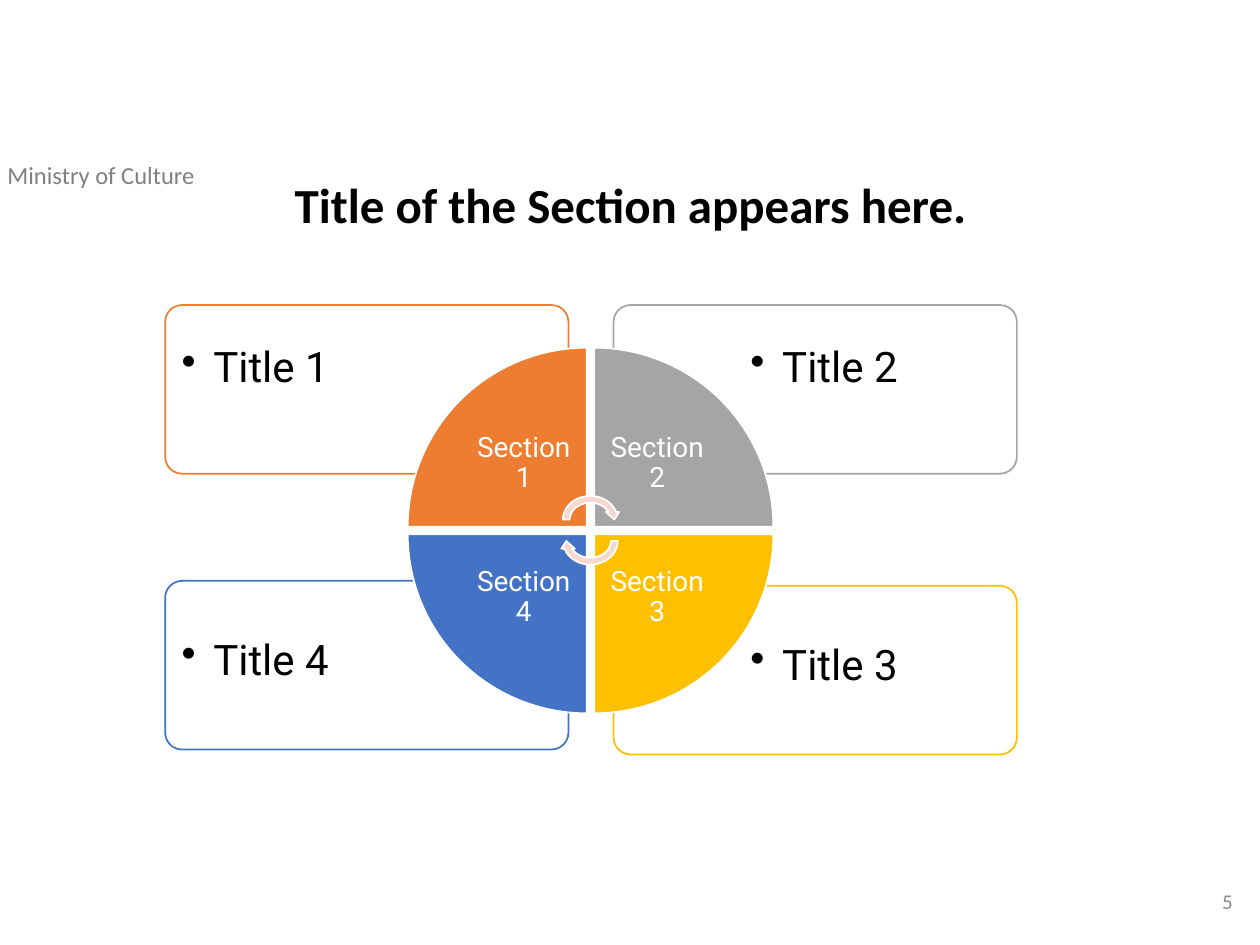
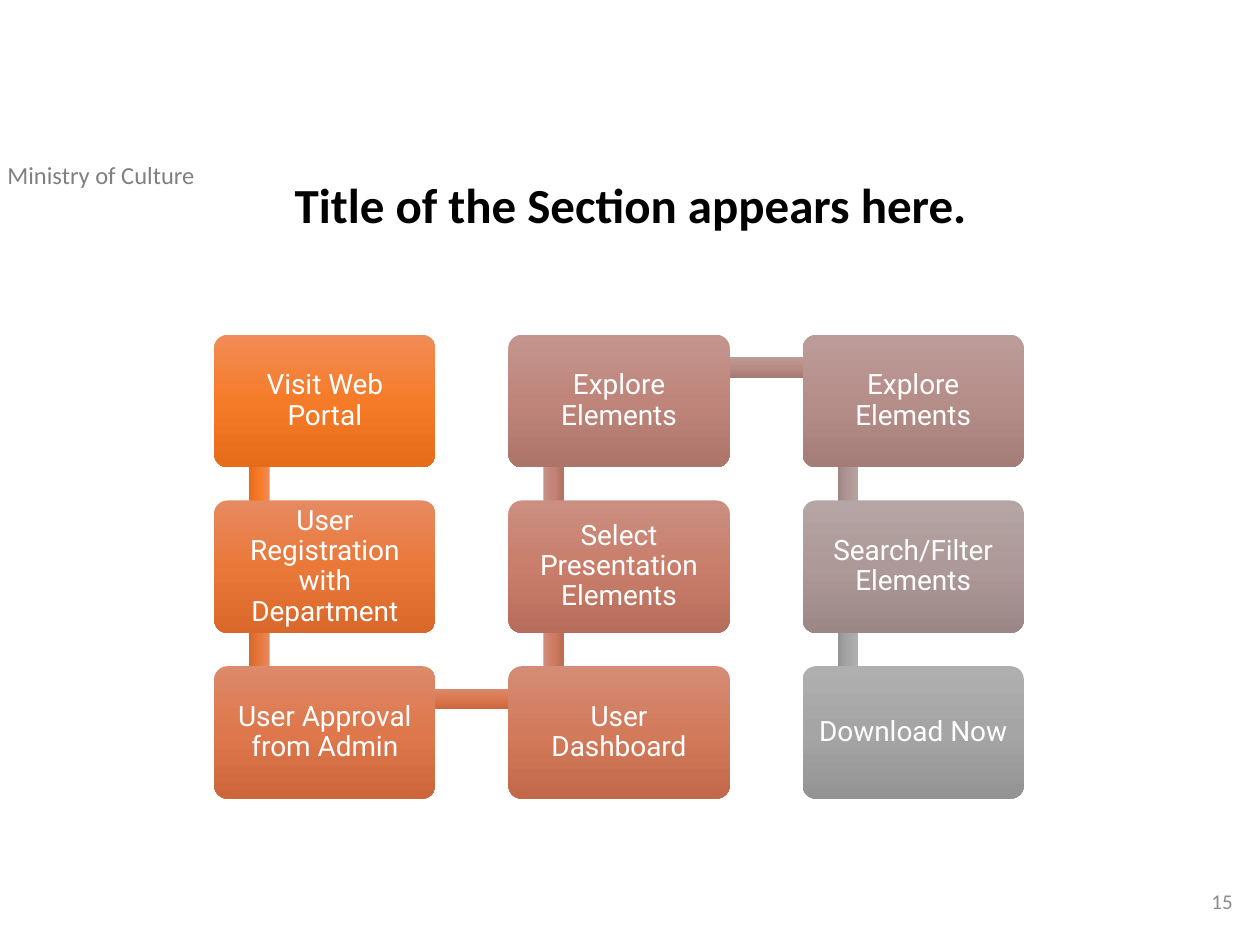
from copy import deepcopy
from dataclasses import dataclass

from lxml import etree
from pptx import Presentation
from pptx.dml.color import RGBColor
from pptx.enum.shapes import MSO_SHAPE
from pptx.enum.text import MSO_ANCHOR, PP_ALIGN
from pptx.oxml.ns import qn
from pptx.util import Cm, Pt

ROUNDED = MSO_SHAPE.ROUNDED_RECTANGLE
BAR = MSO_SHAPE.RECTANGLE
WEDGE = MSO_SHAPE.PIE_WEDGE
CYCLE_ARROW = MSO_SHAPE.CIRCULAR_ARROW
LEFT, CENTER, RIGHT = PP_ALIGN.LEFT, PP_ALIGN.CENTER, PP_ALIGN.RIGHT
TOP, MIDDLE = MSO_ANCHOR.TOP, MSO_ANCHOR.MIDDLE


@dataclass(frozen=True)
class Theme:
    heading_font: str = "Calibri"
    body_font: str = "Roboto"
    black: str = "000000"
    white: str = "FFFFFF"
    header_gray: str = "808080"
    number_gray: str = "8C8C8C"
    orange: str = "ED7D31"
    gray: str = "A5A5A5"
    gold: str = "FFC000"
    blue: str = "4472C4"
    arrow_pink: str = "F8D7CE"
    title_size: int = 28
    card_size: int = 24
    label_size: int = 16
    header_size: int = 14
    number_size: int = 12
    line_width: float = 1
    tight: float = 0.9


class SlideBuilder:
    def __init__(self, presentation, theme):
        self.presentation = presentation
        self.theme = theme
        self.slide = None

    def new_slide(self, title, number):
        theme = self.theme
        self.slide = self.presentation.slides.add_slide(self.presentation.slide_layouts[6])
        self.text(-0.1, 3.1, 7.37, 0.86, "Ministry of Culture", theme.header_size,
                  theme.header_gray, theme.heading_font)
        self.text(5.69, 3.53, 16.41, 2, title, theme.title_size, theme.black,
                  theme.heading_font, bold=True, spacing=theme.tight)
        self.text(19.38, 17.65, 5.72, 1.02, str(number), theme.number_size,
                  theme.number_gray, theme.heading_font, align=RIGHT, anchor=MIDDLE)

    def text(self, left, top, width, height, words, size, color, font, **style):
        box = self.slide.shapes.add_textbox(Cm(left), Cm(top), Cm(width), Cm(height))
        self.fill_text(box, words, size, color, font, **style)

    def fill_text(self, shape, words, size, color, font, bold=False, align=LEFT,
                  anchor=TOP, spacing=1.0, insets=(0.25, 0.13), bullet=False):
        frame = shape.text_frame
        frame.word_wrap = True
        frame.vertical_anchor = anchor
        frame.margin_left = frame.margin_right = Cm(insets[0])
        frame.margin_top = frame.margin_bottom = Cm(insets[1])
        paragraph = frame.paragraphs[0]
        if bullet:
            properties = paragraph._p.get_or_add_pPr()
            properties.set("marL", str(Cm(0.64)))
            properties.set("indent", str(-Cm(0.64)))
            etree.SubElement(properties, qn("a:buChar"), char="•")
        paragraph.alignment = align
        paragraph.line_spacing = spacing
        run = paragraph.add_run()
        run.text = words
        run.font.name = font
        run.font.size = Pt(size)
        run.font.bold = bold
        run.font.color.rgb = RGBColor.from_string(color)

    def shape(self, kind, left, top, width, height, fill, line=None, rotation=0):
        shape = self.slide.shapes.add_shape(kind, Cm(left), Cm(top), Cm(width), Cm(height))
        shape.shadow.inherit = False
        shape.rotation = rotation
        if kind == ROUNDED:
            shape.adjustments[0] = 0.1
        if isinstance(fill, str):
            shape.fill.solid()
            shape.fill.fore_color.rgb = RGBColor.from_string(fill)
        else:
            self.shade(shape, fill)
        if line:
            shape.line.color.rgb = RGBColor.from_string(line)
            shape.line.width = Pt(self.theme.line_width)
        else:
            shape.line.fill.background()
        return shape

    def shade(self, shape, colors):
        shape.fill.gradient()
        shape.fill.gradient_angle = 270
        stop_list = shape._element.spPr.find(".//" + qn("a:gsLst"))
        stop_list.append(deepcopy(stop_list[0]))
        for index, (stop, color) in enumerate(zip(shape.fill.gradient_stops, colors)):
            stop.position = index / 2
            stop.color.rgb = RGBColor.from_string(color)

    def card(self, left, top, color, words, text_dx, text_dy, anchor):
        theme = self.theme
        self.shape(ROUNDED, left, top, 8.13, 3.4, theme.white, color)
        self.text(left + text_dx, top + text_dy, 5.54, 2.41, words, theme.card_size,
                  theme.black, theme.body_font, anchor=anchor, spacing=theme.tight,
                  insets=(0.25, 0.25), bullet=True)

    def wedge(self, column, row, color, words, rotation):
        theme = self.theme
        size, label_size, pitch = 3.61, 2.54, 3.76
        left, top = 8.22 + column * pitch, 7.01 + row * pitch
        inner = size - label_size
        self.shape(WEDGE, left, top, size, size, color, theme.white, rotation)
        self.text(left + inner * (1 - column), top + inner * (1 - row), label_size,
                  label_size, words, theme.label_size, theme.white, theme.body_font,
                  align=CENTER, anchor=MIDDLE, spacing=theme.tight, insets=(0.3, 0.3))

    def step(self, left, top, words, colors):
        theme = self.theme
        box = self.shape(ROUNDED, left, top, 4.46, 2.67, colors)
        self.fill_text(box, words, theme.label_size, theme.white, theme.body_font,
                       align=CENTER, anchor=MIDDLE, spacing=theme.tight,
                       insets=(0.18, 0.18))

    def link(self, start, end, colors):
        thickness = 0.41
        dx, dy = end[0] - start[0], end[1] - start[1]
        length = abs(dx) + abs(dy)
        rotation = 0 if abs(dx) > abs(dy) else 90 if dy > 0 else 270
        center_x, center_y = (start[0] + end[0]) / 2, (start[1] + end[1]) / 2
        self.shape(BAR, center_x - length / 2, center_y - thickness / 2, length,
                   thickness, colors, rotation=rotation)


def build_cycle(builder):
    theme = builder.theme
    builder.new_slide("Title of the Section appears here.", 5)
    left, right = 3.33, 12.37
    builder.card(right, 11.81, theme.gold, "Title 3", 2.51, 0.92, TOP)
    builder.card(left, 11.71, theme.blue, "Title 4", 0.08, 0.92, TOP)
    builder.card(right, 6.15, theme.gray, "Title 2", 2.51, 0.08, MIDDLE)
    builder.card(left, 6.15, theme.orange, "Title 1", 0.08, 0.08, MIDDLE)
    quadrants = [(0, 0, theme.orange), (1, 0, theme.gray),
                 (1, 1, theme.gold), (0, 1, theme.blue)]
    for index, (column, row, color) in enumerate(quadrants):
        builder.wedge(column, row, color, f"Section {index + 1}", index * 90)
    for top, rotation in ((9.93, 0), (10.36, 180)):
        builder.shape(CYCLE_ARROW, 11.28, top, 1.24, 1.09, theme.arrow_pink,
                      theme.white, rotation)


STEPS = [
    ("Visit Web Portal", ("F18C57", "F67B28", "E56C19")),
    ("User Registration with Department", ("E78A60", "EA7839", "D9682A")),
    ("User Approval from Admin", ("DD8A6A", "DE774B", "CD673B")),
    ("User Dashboard", ("D48C76", "D37A5B", "C2694B")),
    ("Select Presentation Elements", ("CB8F81", "C97E6B", "B76D5B")),
    ("Explore Elements", ("C3958D", "BF857B", "AD7469")),
    ("Explore Elements", ("BC9C99", "B68E89", "A47C78")),
    ("Search/Filter Elements", ("B5A5A4", "AD9998", "9B8786")),
    ("Download Now", ("AFAFAF", "A5A5A5", "939393")),
]
LINKS = [
    ("F18C57", "F67B28", "E56C19"),
    ("E58A61", "E8783C", "D7682C"),
    ("DA8A6E", "DB7850", "CA673F"),
    ("D08D7B", "CF7B62", "BD6B52"),
    ("C79288", "C38274", "B17163"),
    ("BE9A95", "B88B85", "A67A74"),
    ("B6A4A2", "AE9796", "9C8584"),
    ("AFAFAF", "A5A5A5", "939393"),
]


def step_corner(index):
    column, row = divmod(index, 3)
    if column % 2:
        row = 2 - row
    return 4.32 + column * 5.93, 6.75 + row * 3.34


def link_point(index):
    left, top = step_corner(index)
    return left + 0.91, top + 0.66


def build_process(builder):
    builder.new_slide("Title of the Section appears here.", 15)
    for index, (words, colors) in enumerate(STEPS):
        if index < len(LINKS):
            builder.link(link_point(index), link_point(index + 1), LINKS[index])
        builder.step(*step_corner(index), words, colors)


def main():
    presentation = Presentation()
    presentation.slide_width = Cm(25.4)
    presentation.slide_height = Cm(19.05)
    builder = SlideBuilder(presentation, Theme())
    build_cycle(builder)
    build_process(builder)
    presentation.save("out.pptx")


if __name__ == "__main__":
    main()
